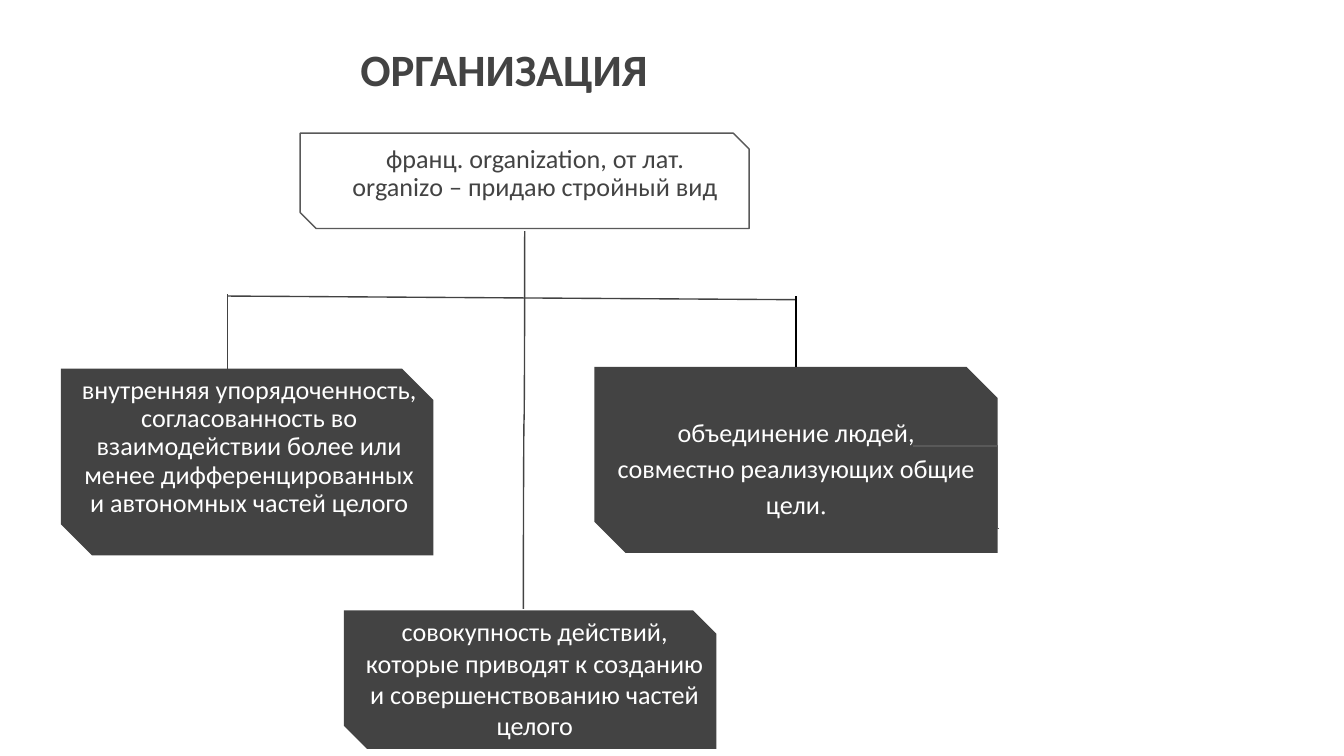
import pptx
import pptx.util
import pptx.dml.color
import pptx.enum.shapes
import pptx.enum.text
import pptx.oxml.ns
import lxml.etree

theme = {
    "dark": pptx.dml.color.RGBColor.from_string("434343"),
    "outline": pptx.dml.color.RGBColor.from_string("595959"),
    "branch": pptx.dml.color.RGBColor.from_string("424242"),
    "black": pptx.dml.color.RGBColor.from_string("000000"),
    "white": pptx.dml.color.RGBColor.from_string("FFFFFF"),
    "font": "Calibri",
    "stop_font": "Times New Roman",
    "title": pptx.util.Pt(24),
    "body": pptx.util.Pt(14),
    "stroke": pptx.util.Pt(0.75),
}
kinds = pptx.enum.shapes.MSO_CONNECTOR

presentation = pptx.Presentation()
presentation.slide_width = pptx.util.Inches(10)
presentation.slide_height = presentation.slide_width * 9 // 16
slide = presentation.slides.add_slide(presentation.slide_layouts[6])
column = presentation.slide_width / 100
row = presentation.slide_height / 56.25


def place(left, top, right, bottom):
    return [round(left * column), round(top * row), round(right * column), round(bottom * row)]


def add_line(kind, ends, color, bend=None, turn=0):
    connector = slide.shapes.add_connector(kind, *place(*ends))
    connector.line.color.rgb = theme[color]
    connector.line.width = theme["stroke"]
    properties = connector._element.spPr
    lxml.etree.SubElement(properties, pptx.oxml.ns.qn("a:effectLst"))
    if turn:
        properties.find(pptx.oxml.ns.qn("a:xfrm")).set("rot", str(turn * 60000))
    if bend:
        geometry = properties.find(pptx.oxml.ns.qn("a:prstGeom"))
        adjustments = geometry.find(pptx.oxml.ns.qn("a:avLst"))
        guide = lxml.etree.SubElement(adjustments, pptx.oxml.ns.qn("a:gd"))
        guide.set("name", "adj1")
        guide.set("fmla", f"val {round(bend * 100000)}")


panels = [
    ((4.54, 27.43, 27.7, 13.9), "dark", None),
    ((44.23, 27.3, 30, 13.83), "dark", None),
    ((22.34, 9.9, 33.4, 7.1), None, "outline"),
    ((25.6, 45.43, 27.7, 10.3), "dark", None),
]
for box, fill, line in panels:
    shape = slide.shapes.add_shape(
        pptx.enum.shapes.MSO_SHAPE.SNIP_2_DIAG_RECTANGLE, *place(*box))
    shape.shadow.inherit = False
    shape.adjustments[0] = 0
    shape.adjustments[1] = 0.167
    if fill:
        shape.fill.solid()
        shape.fill.fore_color.rgb = theme[fill]
    else:
        shape.fill.background()
    if line:
        shape.line.color.rgb = theme[line]
        shape.line.width = theme["stroke"]
    else:
        shape.line.fill.background()

add_line(kinds.CURVE, (24.94, 31.2, 53.04, 31.3), "dark", bend=0.5, turn=90)
add_line(kinds.ELBOW, (67.94, 33.2, 74.25, 39.35), "outline", bend=0.997)
add_line(kinds.STRAIGHT, (16.94, 22.03, 59.24, 22.3), "branch")
add_line(kinds.STRAIGHT, (16.94, 21.9, 16.94, 27.43), "branch")
add_line(kinds.STRAIGHT, (59.24, 22.03, 59.24, 27.3), "black")

texts = [
    ((9, 2.1, 57, 10.3), "title", "dark", True, 1, ["ОРГАНИЗАЦИЯ"]),
    ((24.67, 9.84, 30.3, 9), "body", "dark", False, 0.9,
     ["франц. organization, от лат. оrganizо – придаю стройный вид"]),
    ((4.9, 27.04, 27.3, 6.8), "body", "white", False, 0.9,
     ["внутренняя упорядоченность, согласованность во взаимодействии более или "
      "менее дифференцированных и автономных частей целого"]),
    ((44.9, 29.65, 28.7, 6.8), "body", "white", False, 1.15,
     ["объединение людей, совместно реализующих общие цели", "."]),
    ((25.94, 44.8, 27.7, 6.8), "body", "white", False, 1,
     ["совокупность действий, которые приводят к созданию и совершенствованию частей целого"]),
]
frame_format = {
    "word_wrap": True,
    "vertical_anchor": pptx.enum.text.MSO_ANCHOR.TOP,
    **{f"margin_{side}": round(column) for side in ("left", "top", "right", "bottom")},
}
for box, size, color, bold, spacing, parts in texts:
    frame = slide.shapes.add_textbox(*place(*box)).text_frame
    for name, value in frame_format.items():
        setattr(frame, name, value)
    paragraph = frame.paragraphs[0]
    paragraph.alignment = pptx.enum.text.PP_ALIGN.CENTER
    paragraph.line_spacing = float(spacing)
    for part, font in zip(parts, ("font", "stop_font")):
        run = paragraph.add_run()
        run.text = part
        for name, value in {"size": theme[size], "bold": bold, "name": theme[font]}.items():
            setattr(run.font, name, value)
        run.font.color.rgb = theme[color]

presentation.save("out.pptx")
